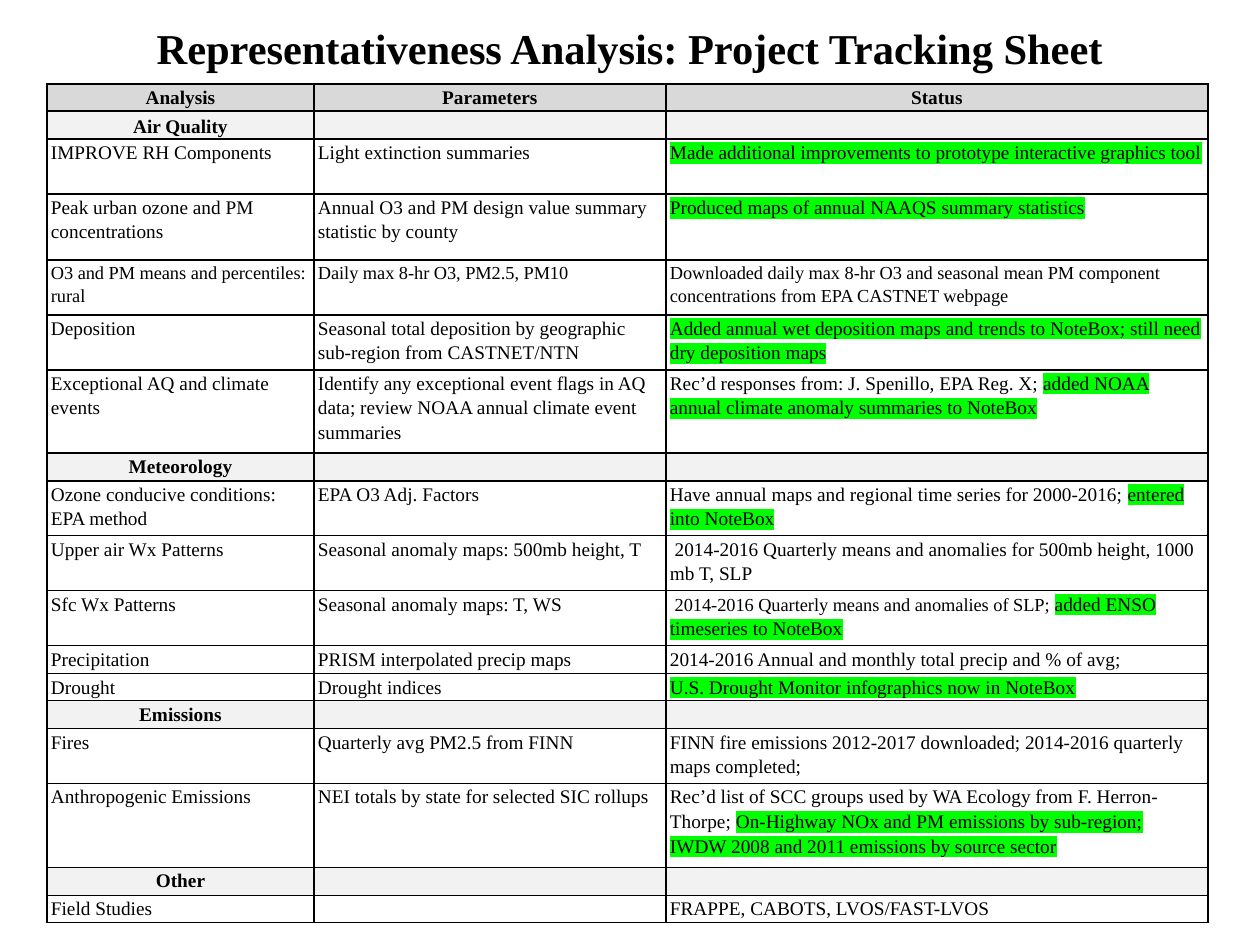
from lxml.etree import SubElement
from pptx import Presentation
from pptx.dml.color import RGBColor
from pptx.enum.text import MSO_ANCHOR, PP_ALIGN
from pptx.oxml.ns import qn
from pptx.util import Emu, Pt

PX = 914400 // 126
FONT = "Times New Roman"
HUES = {"ink": "000000", "head": "D9D9D9", "group": "F2F2F2", "mark": "00FF00"}
TITLE = "Representativeness Analysis: Project Tracking Sheet"
COLS = [267, 352, 542]
LEFT, TOP, PAD = 47, 84, 4

# kind, height, cells; a cell is a text or a list of (text, style)
ROWS = [
    ("head", 27, ["Analysis", "Parameters", "Status"]),
    ("group", 28, ["Air Quality", "", ""]),
    ("", 55, ["IMPROVE RH Components", "Light extinction summaries",
              [("Made additional improvements to prototype interactive graphics tool", "mark")]]),
    ("", 66, ["Peak urban ozone and PM concentrations",
              "Annual O3 and PM design value summary statistic by county",
              [("Produced maps of annual NAAQS summary statistics", "mark")]]),
    ("", 55, [[("O3 and PM means and percentiles: rural", "small")],
              [("Daily max 8-hr O3, PM2.5, PM10", "small")],
              [("Downloaded daily max 8-hr O3 and seasonal mean PM component "
                "concentrations from EPA CASTNET webpage", "small")]]),
    ("", 55, ["Deposition",
              "Seasonal total deposition by geographic sub-region from CASTNET/NTN",
              [("Added annual wet deposition maps and trends to NoteBox; "
                "still need dry deposition maps", "mark")]]),
    ("", 83, ["Exceptional AQ and climate events",
              "Identify any exceptional event flags in AQ data; "
              "review NOAA annual climate event summaries",
              [("Rec’d responses from: J. Spenillo, EPA Reg. X; ", ""),
               ("added NOAA annual climate anomaly summaries to NoteBox", "mark")]]),
    ("group", 28, ["Meteorology", "", ""]),
    ("", 55, ["Ozone conducive conditions: EPA method", "EPA O3 Adj. Factors",
              [("Have annual maps and regional time series for 2000-2016; ", ""),
               ("entered into NoteBox", "mark")]]),
    ("", 55, ["Upper air Wx Patterns", "Seasonal anomaly maps: 500mb height, T",
              " 2014-2016 Quarterly means and anomalies for 500mb height, 1000 mb T, SLP"]),
    ("", 55, ["Sfc Wx Patterns", "Seasonal anomaly maps: T, WS",
              [(" ", ""), ("2014-2016 Quarterly means and anomalies of SLP; ", "small"),
               ("added ENSO timeseries to NoteBox", "mark")]]),
    ("", 28, ["Precipitation", "PRISM interpolated precip maps",
              "2014-2016 Annual and monthly total precip and % of avg;"]),
    ("", 27, ["Drought", "Drought indices",
              [("U.S. Drought Monitor infographics now in NoteBox", "mark")]]),
    ("group", 28, ["Emissions", "", ""]),
    ("", 55, ["Fires", "Quarterly avg PM2.5 from FINN",
              "FINN fire emissions 2012-2017 downloaded; 2014-2016 quarterly maps completed;"]),
    ("", 84, ["Anthropogenic Emissions", "NEI totals by state for selected SIC rollups",
              [("Rec’d list of SCC groups used by WA Ecology from F. Herron-Thorpe; ", ""),
               ("On-Highway NOx and PM emissions by sub-region; "
                "IWDW 2008 and 2011 emissions by source sector", "mark")]]),
    ("group", 28, ["Other", "", ""]),
    ("", 27, ["Field Studies", "", "FRAPPE, CABOTS, LVOS/FAST-LVOS"]),
]


def px(n):
    return Emu(n * PX)


def style(run, size, bold):
    font = run.font
    font.size, font.bold, font.name = Pt(size), bold, FONT
    font.color.rgb = RGBColor.from_string(HUES["ink"])


def mark(run):
    props = run.font._element
    light = SubElement(props, qn("a:highlight"))
    SubElement(light, qn("a:srgbClr"), val=HUES["mark"])
    props.find(qn("a:solidFill")).addnext(light)


def frame(cell):
    props = cell._tc.get_or_add_tcPr()
    for side in ("lnL", "lnR", "lnT", "lnB"):
        line = SubElement(props, qn(f"a:{side}"), w=str(Pt(1)))
        fill = SubElement(line, qn("a:solidFill"))
        SubElement(fill, qn("a:srgbClr"), val=HUES["ink"])


def write(cell, text, kind):
    par = cell.text_frame.paragraphs[0]
    par.line_spacing = 1.15
    par.alignment = PP_ALIGN.CENTER if kind else PP_ALIGN.LEFT
    if not text:
        SubElement(par._p, qn("a:endParaRPr"), sz="1100")
        return
    for part, look in [(text, "")] if isinstance(text, str) else text:
        run = par.add_run()
        run.text = part
        style(run, 10.5 if look == "small" else 11, bool(kind))
        if look == "mark":
            mark(run)


def build(cell, text, kind):
    cell.margin_left = cell.margin_right = px(PAD)
    cell.margin_top = cell.margin_bottom = 0
    if text == "Air Quality":
        cell.vertical_anchor = MSO_ANCHOR.MIDDLE
    frame(cell)
    if kind:
        cell.fill.solid()
        cell.fill.fore_color.rgb = RGBColor.from_string(HUES[kind])
    else:
        cell.fill.background()
    write(cell, text, kind)


deck = Presentation()
deck.slide_width, deck.slide_height = px(1260), px(945)
slide = deck.slides.add_slide(deck.slide_layouts[5])

title = slide.shapes.title
title.left, title.top, title.width, title.height = map(px, (63, 21, 1134, 53))
box = title.text_frame
box.text = TITLE
box.word_wrap = True
box.vertical_anchor = MSO_ANCHOR.MIDDLE
box.margin_top = box.margin_bottom = 0
box.paragraphs[0].alignment = PP_ALIGN.CENTER
style(box.paragraphs[0].runs[0], 24.3, True)

high = sum(row[1] for row in ROWS)
grid = slide.shapes.add_table(len(ROWS), len(COLS), px(LEFT), px(TOP),
                              px(sum(COLS)), px(high)).table
grid.first_row = grid.horz_banding = False
for col, wide in zip(grid.columns, COLS):
    col.width = px(wide)
for row, (kind, tall, texts) in zip(grid.rows, ROWS):
    row.height = px(tall)
    for cell, text in zip(row.cells, texts):
        build(cell, text, kind)

deck.save("out.pptx")
